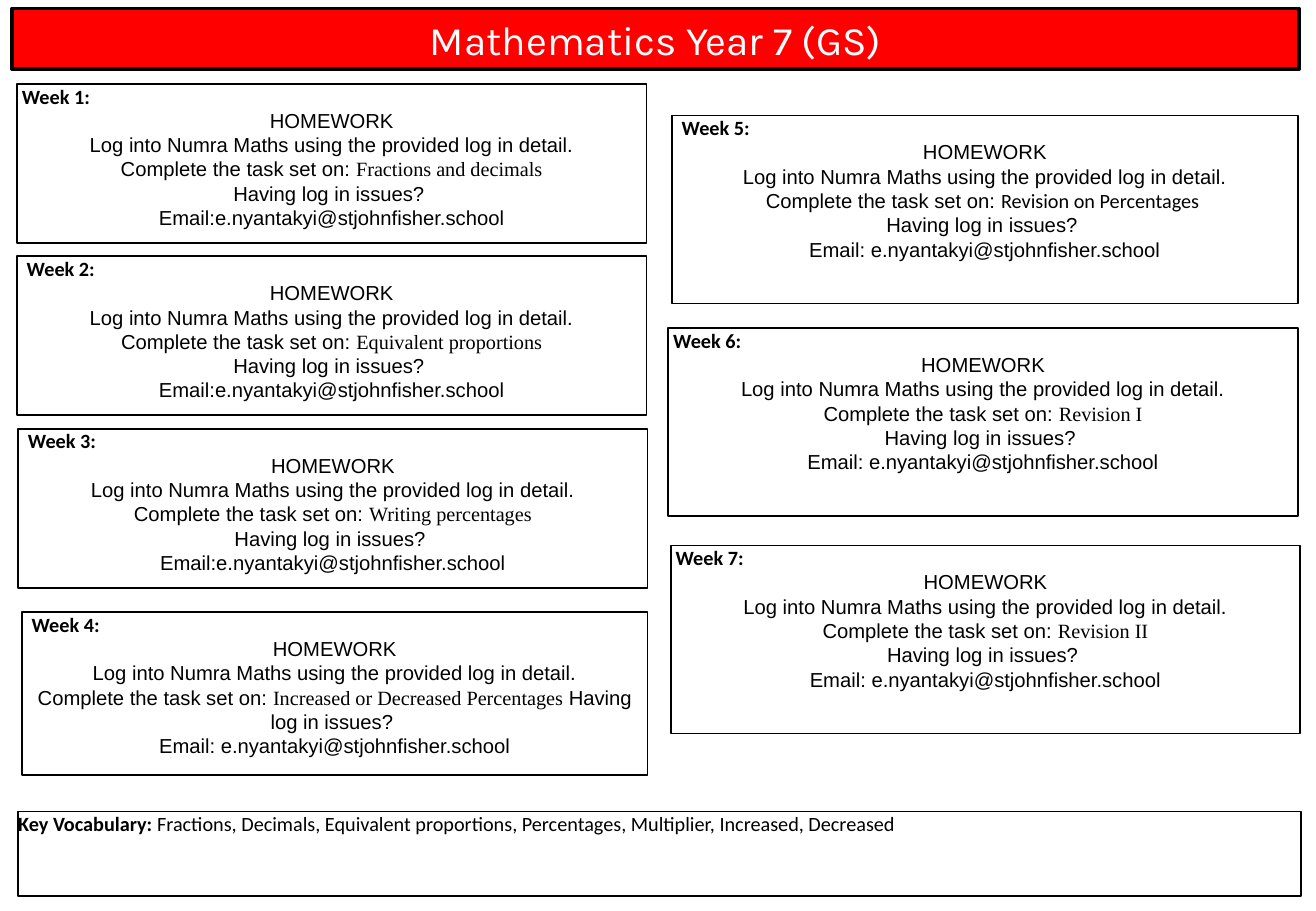
from pptx import Presentation
from pptx.dml.color import RGBColor
from pptx.enum.shapes import MSO_SHAPE
from pptx.enum.text import MSO_ANCHOR, PP_ALIGN
from pptx.util import Inches, Pt

RECT = MSO_SHAPE.RECTANGLE
TOP, MIDDLE = MSO_ANCHOR.TOP, MSO_ANCHOR.MIDDLE
LEFT, CENTER = PP_ALIGN.LEFT, PP_ALIGN.CENTER
SANS, SERIF, HEAD, TITLE = "Arial", "Times New Roman", "Calibri", "Karla"
BLACK, WHITE, RED = "000000", "FFFFFF", "FF0000"


def color(code):
    return RGBColor.from_string(code)


class Sheet:
    """Holds the style and the current slide."""

    def __init__(self, slide, size=12):
        self.slide = slide
        self.size = size

    def box(self, x, y, w, h, fill=None, line=1, anchor=TOP):
        shape = self.slide.shapes.add_shape(
            RECT, Inches(x), Inches(y), Inches(w), Inches(h))
        shape.shadow.inherit = False
        if fill:
            shape.fill.solid()
            shape.fill.fore_color.rgb = color(fill)
        else:
            shape.fill.background()
        shape.line.color.rgb = color(BLACK)
        shape.line.width = Pt(line)
        frame = shape.text_frame
        frame.word_wrap = True
        frame.vertical_anchor = anchor
        frame.margin_left = frame.margin_right = 0
        frame.margin_top = frame.margin_bottom = 0
        return frame

    def para(self, frame, runs, align=CENTER, indent=0, first=False):
        para = frame.paragraphs[0] if first else frame.add_paragraph()
        para.alignment = align
        if indent:
            para._p.get_or_add_pPr().set("marL", str(Inches(indent)))
        for run in runs:
            self.run(para, *run)

    def run(self, para, text, name=SANS, bold=False, size=None, ink=BLACK):
        run = para.add_run()
        run.text = text
        run.font.name = name
        run.font.bold = bold
        run.font.size = Pt(size or self.size)
        run.font.color.rgb = color(ink)

    def banner(self, text, *place):
        frame = self.box(*place, fill=RED, line=2.25, anchor=MIDDLE)
        self.para(frame, [(text, TITLE, False, 24, WHITE)], first=True)

    def week(self, num, place, topic, name, indent, mail, joined=False):
        frame = self.box(*place)
        self.para(frame, [(f"Week {num}:", HEAD, True)], LEFT, indent, True)
        task = [("Complete the task set on: ",), (topic, name)]
        issue = [("Having log in issues? ",)]
        lines = [[("HOMEWORK",)],
                 [("Log into Numra Maths using the provided log in detail.",)]]
        lines += [task + issue] if joined else [task, issue]
        lines.append([(mail + "e.nyantakyi@stjohnfisher.school",)])
        for runs in lines:
            self.para(frame, runs)

    def vocab(self, label, words, *place):
        frame = self.box(*place)
        self.para(frame, [(label, HEAD, True), (words, HEAD)], LEFT, first=True)


def main():
    deck = Presentation()
    deck.slide_width, deck.slide_height = Inches(10.83), Inches(7.5)
    sheet = Sheet(deck.slides.add_slide(deck.slide_layouts[6]))

    # Title banner
    sheet.banner("Mathematics Year 7 (GS)", 0.1, 0.07, 10.59, 0.5)

    # Weekly homework: place, topic, topic font, heading indent, mail label
    near, far = 0.04, 0.08
    tight, loose = "Email:", "Email: "
    weeks = [
        ((0.14, 0.69, 5.18, 1.31), "Fractions and decimals", SERIF, near, tight),
        ((0.14, 2.11, 5.18, 1.31), "Equivalent proportions", SERIF, far, tight),
        ((0.15, 3.53, 5.18, 1.31), "Writing percentages", SERIF, far, tight),
        ((0.18, 5.04, 5.15, 1.34), "Increased or Decreased Percentages ",
         SERIF, far, loose, True),
        ((5.53, 0.95, 5.15, 1.55), "Revision on Percentages ", HEAD, far, loose),
        ((5.5, 2.7, 5.18, 1.55), "Revision I", SERIF, near, loose),
        ((5.52, 4.49, 5.18, 1.55), "Revision II", SERIF, near, loose),
    ]
    for num, week in enumerate(weeks, 1):
        sheet.week(num, *week)

    # Key vocabulary
    sheet.vocab("Key Vocabulary: ",
                "Fractions, Decimals, Equivalent proportions, Percentages, "
                "Multiplier, Increased, Decreased", 0.15, 6.68, 10.56, 0.7)

    deck.save("out.pptx")


if __name__ == "__main__":
    main()
